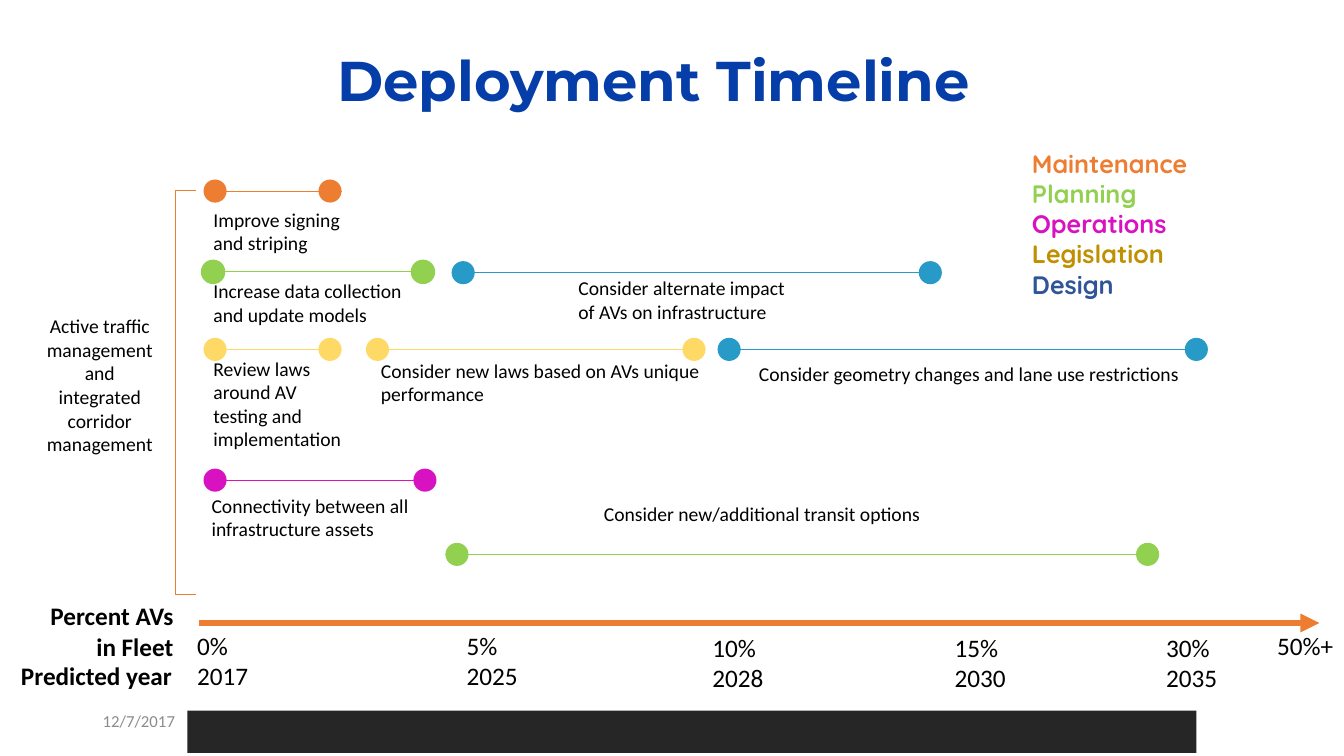
from dataclasses import dataclass
from typing import NamedTuple

from lxml.etree import SubElement
from pptx import Presentation
from pptx.dml.color import RGBColor
from pptx.enum.shapes import MSO_CONNECTOR as Connector, MSO_SHAPE as Shape
from pptx.enum.text import MSO_ANCHOR as Anchor, PP_ALIGN as Align
from pptx.oxml.ns import qn
from pptx.util import Pt


@dataclass(frozen=True)
class Theme:
    """Colours, fonts and sizes of the slide."""
    title: str = "053EA9"
    ink: str = "000000"
    muted: str = "8C8C8C"
    bar: str = "262626"
    orange: str = "ED7D31"
    green: str = "92D050"
    magenta: str = "D812C0"
    gold: str = "BF9000"
    navy: str = "2F5597"
    blue: str = "279AC7"
    yellow: str = "FFD966"
    title_font: str = "Montserrat"
    legend_font: str = "Quicksand"
    body_font: str = "Calibri"
    title_size: float = 40
    label_size: float = 18
    caption_size: float = 14
    date_size: float = 12
    hairline: float = 0.5
    axis_line: float = 4.5
    dot: float = 16.5


THEME = Theme()


class Box(NamedTuple):
    """A rectangle in points."""
    left: float
    top: float
    width: float
    height: float


class Activity(NamedTuple):
    """A span between two dots and its caption, placed relative to the span."""
    color: str
    start: float
    end: float
    middle: float
    caption: str
    shift: float
    drop: float
    width: float
    outline: float = 0
    line_inset: float = 0


ACTIVITIES = [
    Activity(THEME.orange, 4, 102.6, 8.5, "Improve signing and striping", 0, 8.2, 108),
    Activity(THEME.green, 2.6, 169, 66.2, "Increase data collection and update models",
             1.4, 1.6, 171, outline=1),
    Activity(THEME.blue, 181.2, 531.4, 66.8,
             "Consider alternate impact\nof AVs on infrastructure", 83.5, -1.1, 294),
    Activity(THEME.blue, 371.2, 721.4, 121.6,
             "Consider geometry changes and lane use restrictions", 22.4, 5.3, 425),
    Activity(THEME.yellow, 4, 102.6, 121.6,
             "Review laws around AV testing and implementation", 0, 1.7, 108),
    Activity(THEME.yellow, 120, 362.6, 121.6,
             "Consider new laws based on AVs unique performance", 3.6, 3.1, 244, line_inset=11),
    Activity(THEME.magenta, 4, 170.4, 215,
             "Connectivity between all infrastructure assets", -1.4, 6.2, 173.5),
    Activity(THEME.green, 176.8, 686.6, 368 - 100,
             "Consider new/additional transit options", 106, -41, 530, line_inset=4),
]

LEGEND = [
    ("Maintenance", THEME.orange),
    ("Planning", THEME.green),
    ("Operations", THEME.magenta),
    ("Legislation", THEME.gold),
    ("Design", THEME.navy),
]

TICKS = [
    ("0%\n2017", -8, 1.4),
    ("5%\n2025", 184.4, 1.4),
    ("10%\n2028", 360, 2.8),
    ("15%\n2030", 533, 2.8),
    ("30%\n2035", 684, 2.8),
    ("50%+", 763.4, 1.4),
]


def add_text(page, box, text, *, size=THEME.caption_size, font=THEME.body_font,
             colors=(THEME.ink,), bold=False, align=Align.LEFT, anchor=Anchor.TOP, spacing=None):
    """Add a wrapped text box, one paragraph per line, cycling through the colours."""
    frame = page.shapes.add_textbox(*map(Pt, box)).text_frame
    frame.word_wrap = True
    frame.vertical_anchor = anchor
    for index, line in enumerate(text.split("\n")):
        para = frame.add_paragraph() if index else frame.paragraphs[0]
        para.alignment = align
        para.line_spacing = spacing
        span = para.add_run()
        span.text = line
        span.font.name = font
        span.font.size = Pt(size)
        span.font.bold = bold
        span.font.color.rgb = RGBColor.from_string(colors[index % len(colors)])


def add_line(page, start, end, color, width=THEME.hairline, arrow=False):
    """Add a straight line, with an optional arrowhead at its end."""
    line = page.shapes.add_connector(Connector.STRAIGHT, *map(Pt, (*start, *end)))
    line.line.color.rgb = RGBColor.from_string(color)
    line.line.width = Pt(width)
    if arrow:
        SubElement(line.line._get_or_add_ln(), qn("a:tailEnd"), type="triangle")
    SubElement(line._element.spPr, qn("a:effectLst"))


def add_filled(page, kind, box, color, outline=0):
    """Add a filled preset shape."""
    shape = page.shapes.add_shape(kind, *map(Pt, box))
    shape.shadow.inherit = False
    shape.fill.solid()
    shape.fill.fore_color.rgb = RGBColor.from_string(color)
    if outline:
        shape.line.color.rgb = RGBColor.from_string(color)
        shape.line.width = Pt(outline)
    else:
        shape.line.fill.background()


def add_title(page, box):
    """Add the slide title."""
    add_text(page, box, "Deployment Timeline", size=THEME.title_size, font=THEME.title_font,
             colors=(THEME.title,), bold=True, align=Align.CENTER, anchor=Anchor.MIDDLE,
             spacing=0.9)


def add_legend(page, box):
    """Add the coloured list of activity types."""
    names, colors = zip(*LEGEND)
    add_text(page, box, "\n".join(names), size=THEME.label_size, font=THEME.legend_font,
             colors=colors, bold=True)


def add_bracket(page, box):
    """Add the label and the bracket at its right, spanning all activities."""
    right, bottom = box.left + box.width, box.top + box.height
    spine = right - 14.4
    add_text(page, Box(box.left, box.top + 28.8, 93.6, 220.3),
             "Active traffic management and integrated corridor management",
             align=Align.CENTER, anchor=Anchor.MIDDLE)
    add_line(page, (spine, box.top), (spine, bottom), THEME.orange)
    for level in (box.top, bottom):
        add_line(page, (right, level), (spine, level), THEME.orange)


def add_activities(page, box):
    """Add every activity as two dots, a line and a caption."""
    for item in ACTIVITIES:
        start, end = box.left + item.start, box.left + item.end
        middle = box.top + item.middle
        for left in (start, end - THEME.dot):
            dot = Box(left, middle - THEME.dot / 2, THEME.dot, THEME.dot)
            add_filled(page, Shape.OVAL, dot, item.color, item.outline)
        add_line(page, (start, middle), (end - item.line_inset, middle), item.color)
        caption = Box(start + item.shift, middle + item.drop, item.width, 41)
        add_text(page, caption, item.caption)


def add_axis(page, box):
    """Add the time arrow with its row labels and ticks."""
    add_line(page, (box.left, box.top), (box.left + box.width, box.top), THEME.orange,
             THEME.axis_line, arrow=True)
    for text, left, top, width in (("Percent AVs in Fleet", -118.8, -19.5, 108),
                                   ("Predicted year", -141.8, 23, 130)):
        add_text(page, Box(box.left + left, box.top + top, width, 29), text,
                 size=THEME.label_size, bold=True, align=Align.RIGHT)
    for text, left, top in TICKS:
        add_text(page, Box(box.left + left, box.top + top, 60, box.height), text,
                 size=THEME.label_size)


def add_footer(page, box):
    """Add the date and the dark bar."""
    add_text(page, Box(box.left, box.top, 216, 28.8), "12/7/2017", size=THEME.date_size,
             colors=(THEME.muted,), anchor=Anchor.MIDDLE)
    add_filled(page, Shape.RECTANGLE, Box(box.left + 67.7, box.top + 7.2, box.width - 67.7, 30.2),
               THEME.bar)


def main():
    """Build and save the one-slide deck."""
    deck = Presentation()
    deck.slide_width, deck.slide_height = Pt(960), Pt(540)
    page = deck.slides.add_slide(deck.slide_layouts[6])
    add_title(page, Box(170, 7.2, 594, 104.4))
    add_legend(page, Box(730, 102.2, 230, 117))
    add_axis(page, Box(141.8, 445, 800.6, 51))
    add_bracket(page, Box(24.5, 136, 115.2, 288.4))
    add_activities(page, Box(141.4, 128, 721.4, 277))
    add_footer(page, Box(66.2, 500.4, 788.4, 37.4))
    deck.save("out.pptx")


if __name__ == "__main__":
    main()
